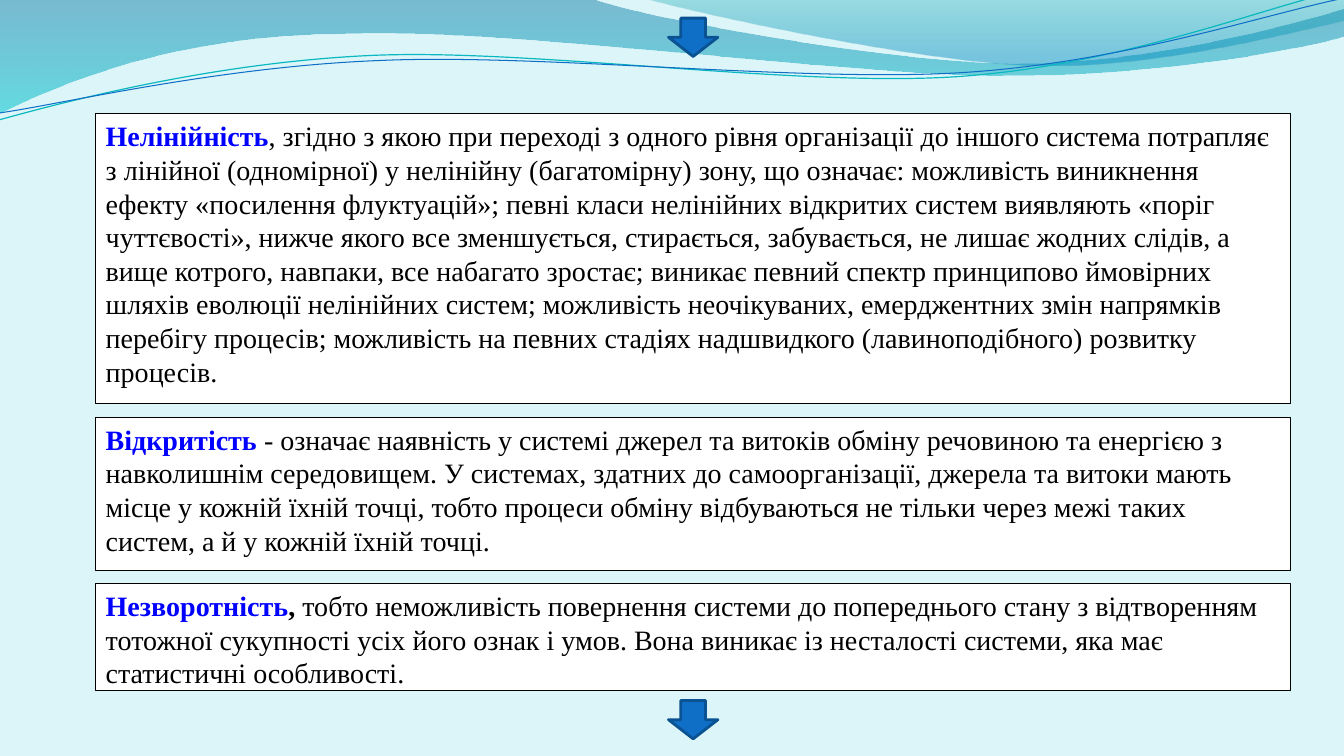
"""Builds a slide with three properties of self-organising systems."""
from dataclasses import dataclass
from math import cos, radians, sin

from lxml.etree import SubElement
from pptx import Presentation
from pptx.dml.color import RGBColor
from pptx.enum.shapes import MSO_SHAPE
from pptx.enum.text import MSO_ANCHOR, PP_ALIGN
from pptx.oxml.ns import qn
from pptx.util import Pt

EMU_PER_PX = 9144


@dataclass(frozen=True)
class Theme:
    """Colours, font and sizes of the slide."""
    background: str = "DBF5F9"
    panel: str = "FFFFFF"
    ink: str = "000000"
    term: str = "0000FF"
    arrow: str = "0F6FC6"
    arrow_edge: str = "0B5292"
    teal_line: str = "0AB8BF"
    blue_line: str = "0F6FC6"
    wide_wave: tuple = ((0, "0074A1", 45), (100, "00C6CF", 55))
    right_wave: tuple = ((0, "00A1A9", 30), (80, "008BBF", 45))
    font: str = "Times New Roman"
    text_size: float = 20
    panel_line: float = 0.75
    arrow_line: float = 2


THEME = Theme()

WIDE_WAVE = [
    (0, -1), (587, -1), (634, 17, 885, 63, 1011, 63), (1138, 63, 1278, 26, 1333, 9),
    (1335, 36), (1311, 44, 1160, 76, 994, 75), (829, 75, 509, 28, 343, 34),
    (172, 35, 61, 83, -1, 113), (0, -1),
]
RIGHT_WAVE = [
    (639, -1), (679, 11, 909, 62, 1025, 65), (1141, 69, 1282, 32, 1333, 21),
    (1333, 0), (639, -1),
]
TEAL_CURVE = [
    (-1, 119), (64, 101, 211, 62, 369, 55), (527, 48, 790, 87, 950, 76),
    (1110, 65, 1252, 8, 1331, -10),
]
BLUE_CURVE = [
    (0, 112), (63, 103, 218, 66, 378, 60), (537, 53, 796, 82, 955, 72),
    (1115, 62, 1255, 14, 1334, -2),
]
CURVE_TILT = -2.7
TEAL_CENTER, BLUE_CENTER = (665, 57), (667, 59)

PANEL_LEFT, PANEL_WIDTH = 95, 1185
PANELS = [
    (113, 287, "Нелінійність", "", ", згідно з якою при переході з одного рівня організації до "
     "іншого система потрапляє з лінійної (одномірної) у нелінійну (багатомірну) зону, що "
     "означає: можливість виникнення ефекту «посилення флуктуацій»; певні класи нелінійних "
     "відкритих систем виявляють «поріг чуттєвості», нижче якого все зменшується, стирається, "
     "забувається, не лишає жодних слідів, а вище котрого, навпаки, все набагато зростає; "
     "виникає певний спектр принципово ймовірних шляхів еволюції нелінійних систем; "
     "можливість неочікуваних, емерджентних змін напрямків перебігу процесів; можливість на "
     "певних стадіях надшвидкого (лавиноподібного) розвитку процесів."),
    (414, 152, "Відкритість", "", " ‑ означає наявність у системі джерел та витоків обміну "
     "речовиною та енергією з навколишнім середовищем. У системах, здатних до "
     "самоорганізації, джерела та витоки мають місце у кожній їхній точці, тобто процеси "
     "обміну відбуваються не тільки через межі таких систем, а й у кожній їхній точці."),
    (579, 106, "Незворотність", ", ", "тобто неможливість повернення системи до попереднього "
     "стану з відтворенням тотожної сукупності усіх його ознак і умов. Вона виникає із "
     "несталості системи, яка має статистичні особливості."),
]
ARROW_LEFT, ARROW_WIDTH, ARROW_HEIGHT = 663, 49, 38
ARROW_TOPS = (18, 695)


def px(length):
    """Turn pixels into EMU."""
    return round(length * EMU_PER_PX)


def color(code):
    """Turn a hex code into a colour."""
    return RGBColor.from_string(code)


def turn(path, center, degrees):
    """Turn every point of a path around a center."""
    c, s = cos(radians(degrees)), sin(radians(degrees))
    turned = []
    for segment in path:
        pairs = zip(segment[::2], segment[1::2])
        offsets = [(x - center[0], y - center[1]) for x, y in pairs]
        turned.append(tuple(value for x, y in offsets
                            for value in (center[0] + c * x - s * y, center[1] + s * x + c * y)))
    return turned


def add_outline(holder, path, closed):
    """Add a freeform of straight and cubic segments."""
    points = [(px(x), px(y)) for segment in path for x, y in zip(segment[::2], segment[1::2])]
    builder = holder.shapes.build_freeform(*points[0])
    builder.add_line_segments(points[1:], close=closed)
    outline = builder.convert_to_shape()
    outline.shadow.inherit = False
    lines = iter(list(outline._element.spPr.iter(qn("a:lnTo"))))
    for segment in path[1:]:
        parts = [next(lines) for _ in segment[::2]]
        if len(parts) == 3:
            geometry = parts[0].getparent()
            curve = SubElement(geometry, qn("a:cubicBezTo"))
            parts[0].addprevious(curve)
            for part in parts:
                curve.append(part[0])
                geometry.remove(part)
    return outline


def add_wave(page, path, stops):
    """Add a wave with a translucent vertical gradient."""
    wave = add_outline(page, path, True)
    wave.line.fill.background()
    wave.fill.gradient()
    wave.fill.gradient_angle = 270
    for stop, (position, code, _) in zip(wave.fill.gradient_stops, stops):
        stop.position = position / 100
        stop.color.rgb = color(code)
    for tint, (_, _, opacity) in zip(wave._element.spPr.iter(qn("a:srgbClr")), stops):
        SubElement(tint, qn("a:alpha")).set("val", str(opacity * 1000))


def add_curve(holder, path, center, code, width):
    """Add a thin tilted open curve."""
    curve = add_outline(holder, turn(path, center, -CURVE_TILT), False)
    curve.rotation = CURVE_TILT
    curve.fill.background()
    curve.line.color.rgb = color(code)
    curve.line.width = Pt(width)


def add_box(holder, kind, bounds, fill, edge, width):
    """Add a filled and outlined preset shape."""
    box = holder.shapes.add_shape(kind, *map(px, bounds))
    box.shadow.inherit = False
    box.fill.solid()
    box.fill.fore_color.rgb = color(fill)
    box.line.color.rgb = color(edge)
    box.line.width = Pt(width)
    return box


def add_panel(holder, top, height, term, mark, definition):
    """Add a panel with a term and its definition."""
    bounds = (PANEL_LEFT, top, PANEL_WIDTH, height)
    box = add_box(holder, MSO_SHAPE.RECTANGLE, bounds, THEME.panel, THEME.ink, THEME.panel_line)
    frame = box.text_frame
    frame.word_wrap = True
    frame.vertical_anchor = MSO_ANCHOR.TOP
    para = frame.paragraphs[0]
    para.alignment = PP_ALIGN.LEFT
    para.font.name = THEME.font
    para.font.size = Pt(THEME.text_size)
    spans = ((term, THEME.term, True), (mark, THEME.ink, True), (definition, THEME.ink, False))
    for text, code, bold in spans:
        if text:
            span = para.add_run()
            span.text = text
            span.font.bold = bold
            span.font.color.rgb = color(code)


def add_arrow(page, top):
    """Add a downward arrow."""
    bounds = (ARROW_LEFT, top, ARROW_WIDTH, ARROW_HEIGHT)
    add_box(page, MSO_SHAPE.DOWN_ARROW, bounds, THEME.arrow, THEME.arrow_edge, THEME.arrow_line)


def main():
    """Build and save the slide."""
    deck = Presentation()
    deck.slide_width, deck.slide_height = px(1333), px(750)
    page = deck.slides.add_slide(deck.slide_layouts[6])
    page.background.fill.solid()
    page.background.fill.fore_color.rgb = color(THEME.background)
    add_wave(page, WIDE_WAVE, THEME.wide_wave)
    add_wave(page, RIGHT_WAVE, THEME.right_wave)
    curves = page.shapes.add_group_shape()
    add_curve(curves, TEAL_CURVE, TEAL_CENTER, THEME.teal_line, 0.85)
    add_curve(curves, BLUE_CURVE, BLUE_CENTER, THEME.blue_line, 0.75)
    panels = page.shapes.add_group_shape()
    for panel in PANELS:
        add_panel(panels, *panel)
    for top in ARROW_TOPS:
        add_arrow(page, top)
    deck.save("out.pptx")


if __name__ == "__main__":
    main()
